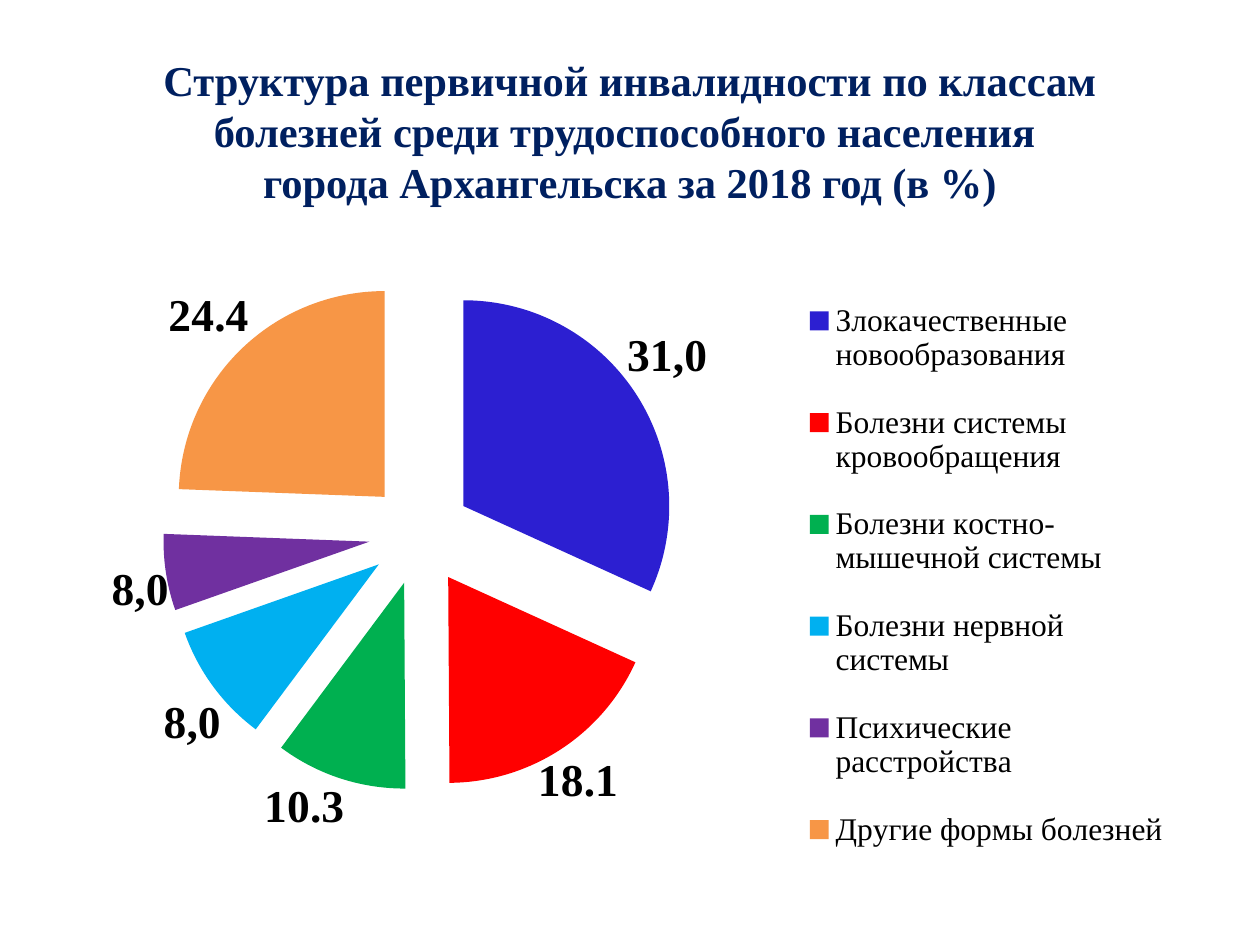
import pptx
import pptx.chart.data
import pptx.dml.color
import pptx.enum.chart
import pptx.enum.text
import pptx.oxml
import pptx.oxml.ns
import pptx.util
from pptx.util import Pt

TITLE = (
    "Структура первичной инвалидности по классам болезней "
    "среди трудоспособного населения \vгорода Архангельска за 2018 год (в %)"
)
# category, value, colour, label text (None shows the value), label shift in points
SLICES = [
    ("Злокачественные новообразования", 31.8, "2C1FD1", "31,0", (-9, -5)),
    ("Болезни системы кровообращения", 18.1, "FF0000", None, (-15, 0)),
    ("Болезни костно-мышечной системы", 10.3, "00B050", None, (4, -2)),
    ("Болезни нервной системы", 9.4, "00B0F0", "8,0", (8, 4)),
    ("Психические расстройства", 6, "7030A0", "8,0", (6, -5)),
    ("Другие формы болезней", 24.4, "F79646", None, (7, -1)),
]
EXPLOSION = 25
THEME = {
    "font": "Times New Roman",
    "title": "002060",
    "text": "000000",
    "title_size": 24.3,
    "title_leading": 29.1,
    "chart_size": 14,
    "legend_size": 18,
    "label_size": 26,
}
TITLE_BOX = (60, 20.5, 600, 108)
CHART_BOX = (25, 140, 652, 363)
# left, top, width, height as shares of the chart
PLOT_AREA = (0.10, 0.05, 0.46, 0.81)
LEGEND_AREA = (0.69, 0.04, 0.31, 0.96)


def style_font(font, size, color=THEME["text"], bold=False):
    font.name = THEME["font"]
    font.size = Pt(size)
    font.bold = bold
    font.color.rgb = pptx.dml.color.RGBColor.from_string(color)


def write(tf, text, align=None, leading=None, **style):
    p = tf.paragraphs[0]
    p.text = text
    p.alignment = align
    p.line_spacing = leading
    for r in p.runs:
        style_font(r.font, **style)


def chart_xml(body):
    return pptx.oxml.parse_xml(body.replace(">", f" {pptx.oxml.ns.nsdecls('c')}>", 1))


def manual_layout(head, keys, values):
    sizes = "".join(f'<c:{k} val="{v}"/>' for k, v in zip(keys, values))
    return chart_xml(
        f"<c:layout><c:manualLayout>{head}{sizes}</c:manualLayout></c:layout>"
    )


def explosion():
    return chart_xml(f'<c:explosion val="{EXPLOSION}"></c:explosion>')


def add_title(s):
    tf = s.shapes.add_textbox(*map(Pt, TITLE_BOX)).text_frame
    tf.word_wrap = True
    tf.vertical_anchor = pptx.enum.text.MSO_ANCHOR.MIDDLE
    write(tf, TITLE, align=pptx.enum.text.PP_ALIGN.CENTER,
          leading=Pt(THEME["title_leading"]), size=THEME["title_size"],
          color=THEME["title"], bold=True)


def add_pie(s):
    data = pptx.chart.data.CategoryChartData(number_format="0.0")
    data.categories = [row[0] for row in SLICES]
    data.add_series("Series 1", [row[1] for row in SLICES])
    chart = s.shapes.add_chart(
        pptx.enum.chart.XL_CHART_TYPE.PIE, *map(Pt, CHART_BOX), data
    ).chart
    chart.has_title = False
    style_font(chart.font, THEME["chart_size"])

    chart.has_legend = True
    legend = chart.legend
    legend.position = pptx.enum.chart.XL_LEGEND_POSITION.RIGHT
    legend.include_in_layout = False
    style_font(legend.font, THEME["legend_size"])

    plot = chart.plots[0]
    plot.vary_by_categories = True
    format_slices(plot.series[0])
    place_areas(chart)


def format_slices(series):
    outside = pptx.enum.chart.XL_LABEL_POSITION.OUTSIDE_END
    labels = series.data_labels
    labels.show_value = True
    labels.show_percentage = False
    labels.number_format = "0.0"
    labels.number_format_is_linked = False
    labels.position = outside
    style_font(labels.font, THEME["label_size"], bold=True)

    for i, (_, _, color, text, _) in enumerate(SLICES):
        point = series.points[i]
        fill = point.format.fill
        fill.solid()
        fill.fore_color.rgb = pptx.dml.color.RGBColor.from_string(color)
        label = point.data_label
        if text:
            write(label.text_frame, text, size=THEME["label_size"], bold=True)
        else:
            style_font(label.font, THEME["label_size"], bold=True)
        label.position = outside

    ser = series._element
    ser.find(pptx.oxml.ns.qn("c:tx")).addnext(explosion())
    for sp_pr in ser.xpath("c:dPt/c:spPr"):
        sp_pr.addprevious(explosion())
    for leader in ser.xpath("c:dLbls/c:showLeaderLines"):
        leader.set("val", "0")
    for idx, row in zip(ser.xpath("c:dLbls/c:dLbl/c:idx"), SLICES):
        shift = [round(d / size, 4) for d, size in zip(row[4], CHART_BOX[2:])]
        idx.addnext(manual_layout("", "xy", shift))


def place_areas(chart):
    root = chart._chartSpace
    for old in root.xpath("c:chart/c:plotArea/c:layout | c:chart/c:legend/c:layout"):
        old.getparent().remove(old)
    edges = '<c:xMode val="edge"/><c:yMode val="edge"/>'
    inner = '<c:layoutTarget val="inner"/>' + edges
    plot_area = root.xpath("c:chart/c:plotArea")[0]
    plot_area.insert(0, manual_layout(inner, "xywh", PLOT_AREA))
    legend_pos = root.xpath("c:chart/c:legend/c:legendPos")[0]
    legend_pos.addnext(manual_layout(edges, "xywh", LEGEND_AREA))


def main():
    prs = pptx.Presentation()
    prs.slide_width, prs.slide_height = Pt(720), Pt(540)
    s = prs.slides.add_slide(prs.slide_layouts[6])
    add_title(s)
    add_pie(s)
    prs.save("out.pptx")


if __name__ == "__main__":
    main()
